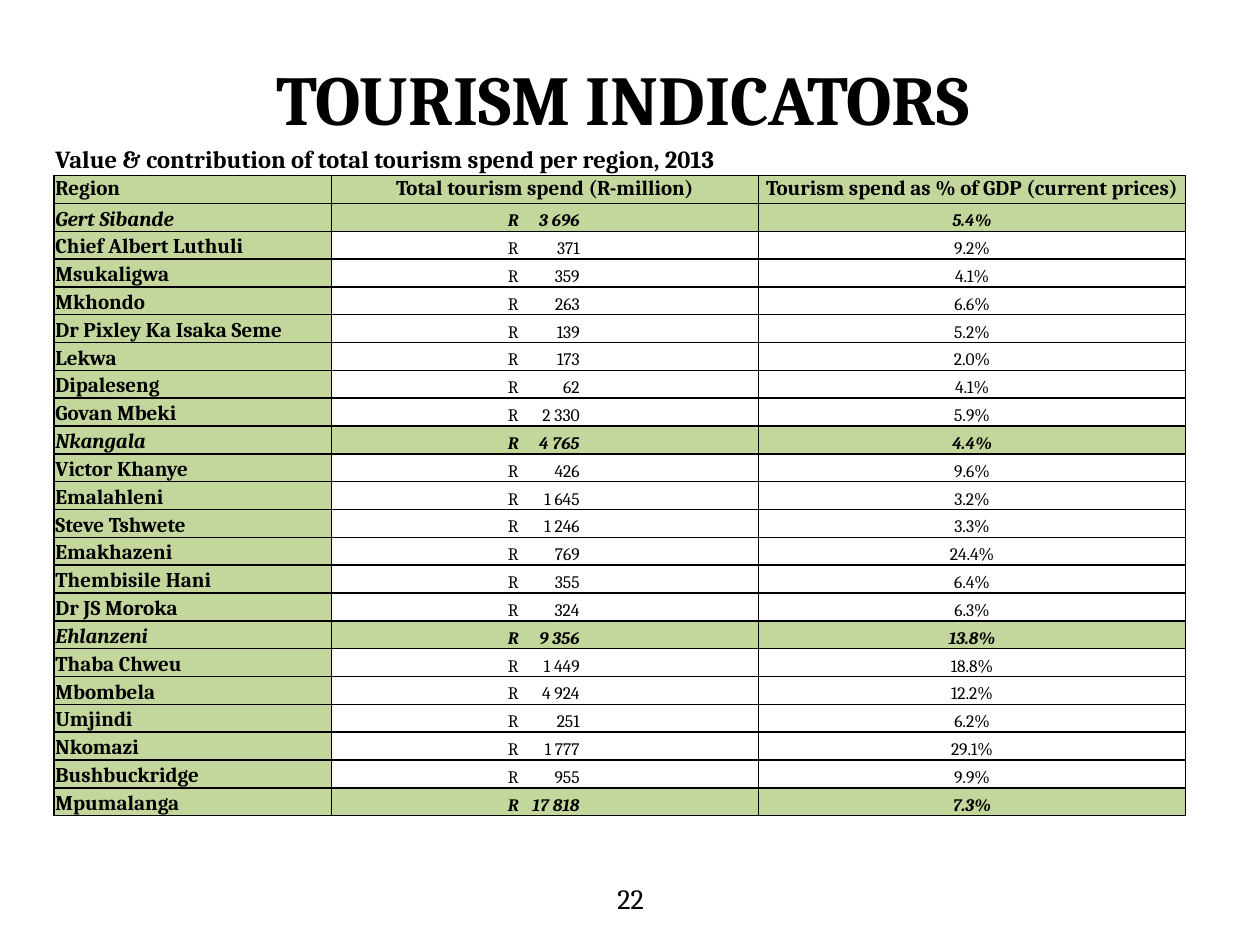
"""Build the tourism indicators slide with spend per region."""
from lxml.etree import SubElement
from pptx import Presentation
from pptx.dml.color import RGBColor
from pptx.enum.text import MSO_ANCHOR, PP_ALIGN
from pptx.oxml.ns import qn
from pptx.util import Inches, Pt

TITLE = "TOURISM INDICATORS "
CAPTION = "Value & contribution of total tourism spend per region, 2013"
HEADINGS = ("Region", "Total tourism spend (R-million)", "Tourism spend as % of GDP (current prices)")
REGIONS = [
    ("Gert Sibande", "3 696", "5.4%"),
    ("Chief Albert Luthuli", "371", "9.2%"),
    ("Msukaligwa", "359", "4.1%"),
    ("Mkhondo", "263", "6.6%"),
    ("Dr Pixley Ka Isaka Seme", "139", "5.2%"),
    ("Lekwa", "173", "2.0%"),
    ("Dipaleseng", "62", "4.1%"),
    ("Govan Mbeki", "2 330", "5.9%"),
    ("Nkangala", "4 765", "4.4%"),
    ("Victor Khanye", "426", "9.6%"),
    ("Emalahleni", "1 645", "3.2%"),
    ("Steve Tshwete", "1 246", "3.3%"),
    ("Emakhazeni", "769", "24.4%"),
    ("Thembisile Hani", "355", "6.4%"),
    ("Dr JS Moroka", "324", "6.3%"),
    ("Ehlanzeni", "9 356", "13.8%"),
    ("Thaba Chweu", "1 449", "18.8%"),
    ("Mbombela", "4 924", "12.2%"),
    ("Umjindi", "251", "6.2%"),
    ("Nkomazi", "1 777", "29.1%"),
    ("Bushbuckridge", "955", "9.9%"),
    ("Mpumalanga", "17 818", "7.3%"),
]
DISTRICTS = {"Gert Sibande", "Nkangala", "Ehlanzeni"}
PROVINCE = "Mpumalanga"

BLACK = RGBColor(0x00, 0x00, 0x00)
GREEN = RGBColor(0xC3, 0xD6, 0x9B)
FONT = "Cambria"
COLUMN_WIDTHS = (2.2, 3.39, 3.39)
TABLE_HEIGHT = 5.32
CAPTION_HEIGHT = 0.24
ROW_HEIGHT = (TABLE_HEIGHT - CAPTION_HEIGHT) / (len(REGIONS) + 1)
CELL_INSET = 0.01
SPEND_INSET = 1.4
SPEND_TAB = 0.57


def write_text(frame, text, size=12, bold=False, italic=False, align=PP_ALIGN.LEFT, tab=None):
    paragraph = frame.paragraphs[0]
    paragraph.alignment = align
    if tab:
        tab_list = SubElement(paragraph._p.get_or_add_pPr(), qn("a:tabLst"))
        SubElement(tab_list, qn("a:tab"), pos=str(Inches(tab)), algn="r")
    run = paragraph.add_run()
    run.text = text
    font = run.font
    font.name, font.size, font.bold, font.italic = FONT, Pt(size), bold, italic
    font.color.rgb = BLACK


def add_text_box(slide, box, text, anchor=MSO_ANCHOR.TOP, **style):
    frame = slide.shapes.add_textbox(*map(Inches, box)).text_frame
    frame.word_wrap = True
    frame.vertical_anchor = anchor
    write_text(frame, text, align=PP_ALIGN.CENTER, **style)


def set_borders(cell, visible):
    properties = cell._tc.get_or_add_tcPr()
    for side in "LRTB":
        line = SubElement(properties, qn(f"a:ln{side}"), w=str(Pt(1)))
        if side in visible:
            fill = SubElement(line, qn("a:solidFill"))
            SubElement(fill, qn("a:srgbClr"), val=str(BLACK))
        else:
            SubElement(line, qn("a:noFill"))


def fill_cell(cell, text, borders="LRTB", color=None, anchor=MSO_ANCHOR.BOTTOM, inset=CELL_INSET, **style):
    set_borders(cell, borders)
    if color is None:
        cell.fill.background()
    else:
        cell.fill.solid()
        cell.fill.fore_color.rgb = color
    cell.margin_left = Inches(inset)
    cell.margin_right = cell.margin_top = Inches(CELL_INSET)
    cell.margin_bottom = 0
    cell.vertical_anchor = anchor
    if text:
        write_text(cell.text_frame, text, **style)


def add_region_table(slide):
    row_count = len(REGIONS) + 2
    box = (0.43, 1.15, sum(COLUMN_WIDTHS), TABLE_HEIGHT)
    table = slide.shapes.add_table(row_count, len(COLUMN_WIDTHS), *map(Inches, box)).table
    table.first_row = table.horz_banding = False
    for column, width in zip(table.columns, COLUMN_WIDTHS):
        column.width = Inches(width)
    for index, row in enumerate(table.rows):
        row.height = Inches(ROW_HEIGHT if index else CAPTION_HEIGHT)

    table.cell(0, 0).merge(table.cell(0, 2))
    for column, text in enumerate((CAPTION, "", "")):
        fill_cell(table.cell(0, column), text, borders="B", anchor=MSO_ANCHOR.TOP, size=14, bold=True)
    for column, text in enumerate(HEADINGS):
        align = PP_ALIGN.CENTER if column else PP_ALIGN.LEFT
        fill_cell(table.cell(1, column), text, color=GREEN, anchor=MSO_ANCHOR.TOP, bold=True, align=align)
    for row, (region, spend, share) in enumerate(REGIONS, start=2):
        district = region in DISTRICTS
        total = district or region == PROVINCE
        values = dict(color=GREEN if total else None, size=10, bold=total, italic=total)
        fill_cell(table.cell(row, 0), region, color=GREEN, bold=True, italic=district)
        fill_cell(table.cell(row, 1), f"R\t{spend}", inset=SPEND_INSET, tab=SPEND_TAB, **values)
        fill_cell(table.cell(row, 2), share, align=PP_ALIGN.CENTER, **values)


def main():
    presentation = Presentation()
    presentation.slide_width, presentation.slide_height = Inches(10), Inches(7.5)
    slide = presentation.slides.add_slide(presentation.slide_layouts[6])
    add_text_box(slide, (0.51, 0, 8.99, 1.55), TITLE, anchor=MSO_ANCHOR.MIDDLE, size=40, bold=True)
    add_region_table(slide)
    add_text_box(slide, (3.42, 6.95, 3.17, 0.4), "22", size=16)
    presentation.save("out.pptx")


if __name__ == "__main__":
    main()
